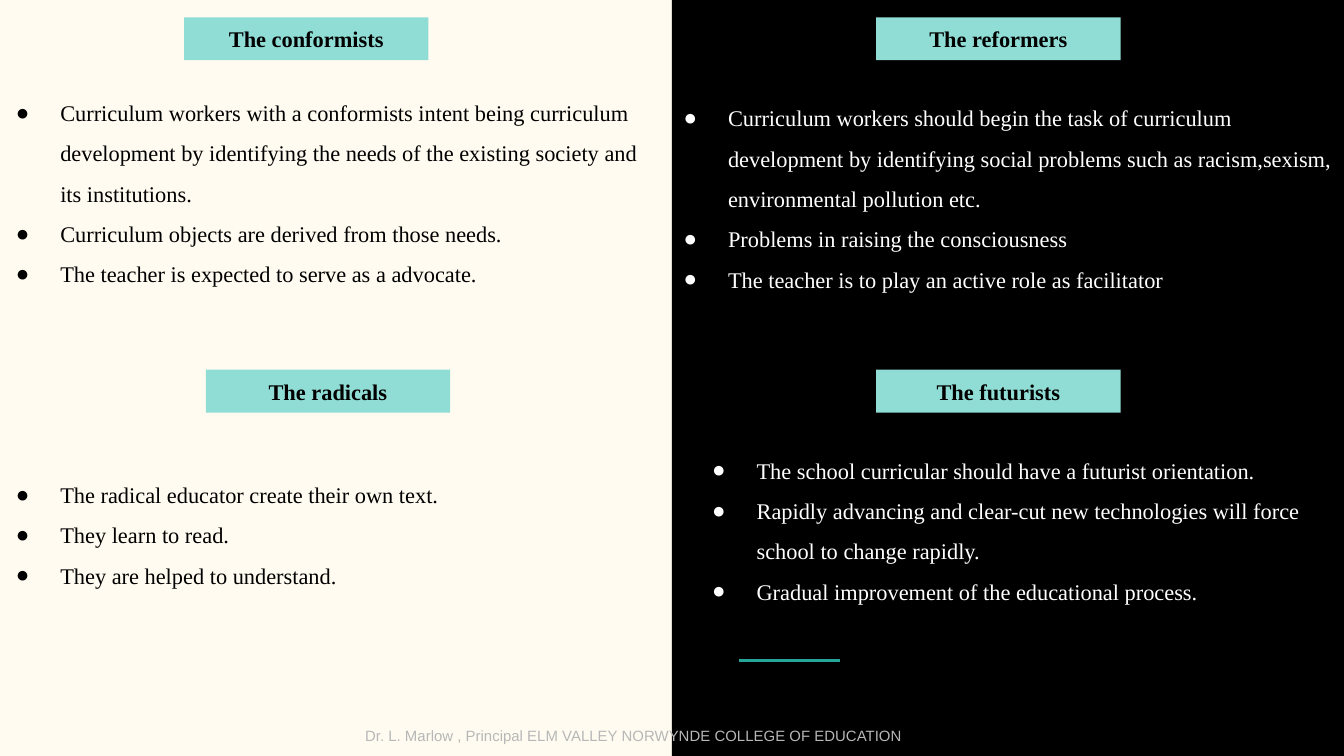
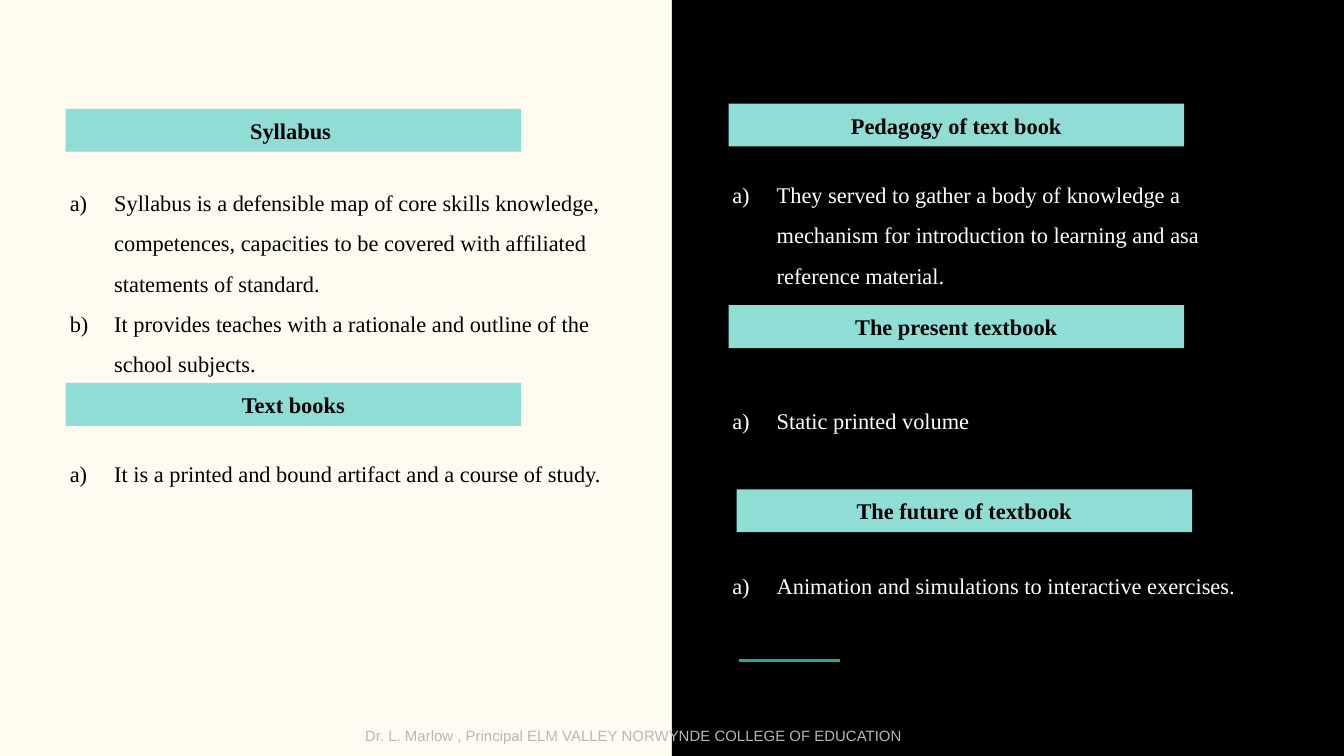
import pptx
import pptx.util
import pptx.dml.color
import pptx.enum.shapes
import pptx.enum.text
import pptx.oxml
import pptx.oxml.ns

Cm, Pt = pptx.util.Cm, pptx.util.Pt
RGB = pptx.dml.color.RGBColor
SHAPE = pptx.enum.shapes.MSO_SHAPE.RECTANGLE
LINE = pptx.enum.shapes.MSO_CONNECTOR.STRAIGHT
ALIGN = pptx.enum.text.PP_ALIGN
ANCHOR = pptx.enum.text.MSO_ANCHOR
FIT = pptx.enum.text.MSO_AUTO_SIZE.SHAPE_TO_FIT_TEXT

CREAM = RGB(0xFF, 0xFB, 0xF0)
BLACK = RGB(0, 0, 0)
WHITE = RGB(0xFF, 0xFF, 0xFF)
MINT = RGB(0x90, 0xDD, 0xD6)
TEAL = RGB(0x26, 0xA6, 0x9A)
GREY = RGB(0xB7, 0xB7, 0xB7)

WIDE, HIGH = 25.4, 14.29
HALF = WIDE / 2
BAND = 0.81
SERIF = "Times New Roman"
DOT = '<a:buChar %s char="●"/>'
ALPHA = '<a:buAutoNum %s type="alphaLcParenR"/>'
CREDIT = "Dr. L. Marlow , Principal ELM VALLEY NORWYNDE COLLEGE OF EDUCATION"

# Each section: title, (x, y) of its band, (x, y, w, h) of its list, items.
# All x are measured from the left edge of the half that holds the section.
VIEWS_LEFT = [
    ("The conformists", (3.48, 0.33), (-0.38, 1.37, 13.16, 3.76), [
        "Curriculum workers with a conformists intent being curriculum "
        "development by identifying the needs of the existing society and "
        "its institutions.",
        "Curriculum objects are derived from those needs.",
        "The teacher is expected to serve as a advocate."]),
    ("The radicals", (3.89, 6.99), (-0.38, 8.59, 13.44, 5.03), [
        "The radical educator create their own text.",
        "They learn to read.",
        "They are helped to understand."]),
]
VIEWS_RIGHT = [
    ("The reformers", (3.86, 0.33), (-0.46, 1.47, 13.44, 5.03), [
        "Curriculum workers should begin the task of curriculum development "
        "by identifying social problems such as racism,sexism, "
        "environmental pollution etc.",
        "Problems in raising the consciousness",
        "The teacher is to play an active role as facilitator"]),
    ("The futurists", (3.86, 6.99), (0.08, 8.13, 12.62, 5.03), [
        "The school curricular should have a futurist orientation.",
        "Rapidly advancing and clear-cut new technologies will force school "
        "to change rapidly.",
        "Gradual improvement of the educational process."]),
]
BOOKS_LEFT = [
    ("Syllabus ", (1.24, 2.06), (0.64, 3.07, 11.38, 8.86), [
        "Syllabus is a defensible map of core skills knowledge, competences, "
        "capacities to be covered with affiliated statements of standard.",
        "It provides teaches with a rationale and outline of the school "
        "subjects."]),
    ("Text books", (1.24, 7.24), (0.64, 8.2, 11.38, 1.02), [
        "It is a printed and bound artifact and a course of study."]),
]
BOOKS_RIGHT = [
    ("Pedagogy of text book", (1.07, 1.96), (0.46, 2.92, 11.38, 2.51), [
        "They served to gather a body of knowledge a mechanism for "
        "introduction to learning and asa reference material."]),
    ("The present textbook", (1.07, 5.77), (0.46, 7.19, 11.38, 2.51), [
        "Static printed volume"]),
    ("The future of textbook", (1.22, 9.25), (0.46, 10.31, 11.38, 2.51), [
        "Animation and simulations to interactive exercises."]),
]


def style(para, font, size, ink, bold=False):
    for run in para.runs:
        run.font.name = font
        run.font.size = Pt(size)
        run.font.color.rgb = ink
        run.font.bold = bold


def inset(frame):
    """Wrap the text and give the frame equal margins."""
    frame.word_wrap = True
    frame.margin_left = frame.margin_right = Cm(0.25)
    frame.margin_top = frame.margin_bottom = Cm(0.25)


def block(slide, box, fill):
    shape = slide.shapes.add_shape(SHAPE, *map(Cm, box))
    shape.shadow.inherit = False
    shape.fill.solid()
    shape.fill.fore_color.rgb = fill
    shape.line.fill.background()
    return shape


def text(slide, box, words):
    frame = slide.shapes.add_textbox(*map(Cm, box)).text_frame
    inset(frame)
    frame.text = words
    return frame


def band(slide, box, title):
    frame = block(slide, box, MINT).text_frame
    inset(frame)
    frame.vertical_anchor = ANCHOR.MIDDLE
    frame.text = title
    para = frame.paragraphs[0]
    para.alignment = ALIGN.CENTER
    style(para, SERIF, 12, BLACK, True)


def mark(para, kind, ink):
    """Give the paragraph a hanging bullet or letter."""
    props = para._p.get_or_add_pPr()
    props.set("marL", str(Cm(1.27)))
    props.set("indent", str(-Cm(0.84)))
    space = pptx.oxml.ns.nsdecls("a")
    for xml in (f'<a:buClr {space}><a:srgbClr val="{ink}"/></a:buClr>',
                f'<a:buFont {space} typeface="{SERIF}"/>',
                kind % space):
        props.append(pptx.oxml.parse_xml(xml))


def points(slide, box, items, kind, ink):
    frame = text(slide, box, "\n".join(items))
    for para in frame.paragraphs:
        para.line_spacing = 1.5
        mark(para, kind, ink)
        style(para, SERIF, 12, ink)


def half(slide, left, parts, wide, kind, ink):
    """Fill one half of the slide with titled lists."""
    for title, (x, y), (lx, ly, w, h), items in parts:
        band(slide, (left + x, y, wide, BAND), title)
        points(slide, (left + lx, ly, w, h), items, kind, ink)


def base(slide):
    """Draw the background, dark panel and short rule."""
    slide.background.fill.solid()
    slide.background.fill.fore_color.rgb = CREAM
    block(slide, (HALF, 0, HALF, HIGH), BLACK)
    rule = slide.shapes.add_connector(
        LINE, *map(Cm, (HALF + 1.27, 12.49, HALF + 3.18, 12.49)))
    rule.line.color.rgb = TEAL
    rule.line.width = Pt(1.5)
    rule._element.spPr.append(pptx.oxml.parse_xml(
        f'<a:effectLst {pptx.oxml.ns.nsdecls("a")}/>'))


def foot(slide):
    frame = text(slide, (6.65, 13.56, 13.84, 0.71), CREDIT)
    frame.auto_size = FIT
    style(frame.paragraphs[0], "Arial", 8, GREY)


def page(deck, left, right, wide, kind):
    slide = deck.slides.add_slide(deck.slide_layouts[6])
    base(slide)
    half(slide, 0, left, wide, kind, BLACK)
    half(slide, HALF, right, wide, kind, WHITE)
    foot(slide)


def main():
    deck = pptx.Presentation()
    deck.slide_width, deck.slide_height = Cm(WIDE), Cm(HIGH)
    page(deck, VIEWS_LEFT, VIEWS_RIGHT, 4.62, DOT)
    page(deck, BOOKS_LEFT, BOOKS_RIGHT, 8.61, ALPHA)
    deck.save("out.pptx")


if __name__ == "__main__":
    main()
